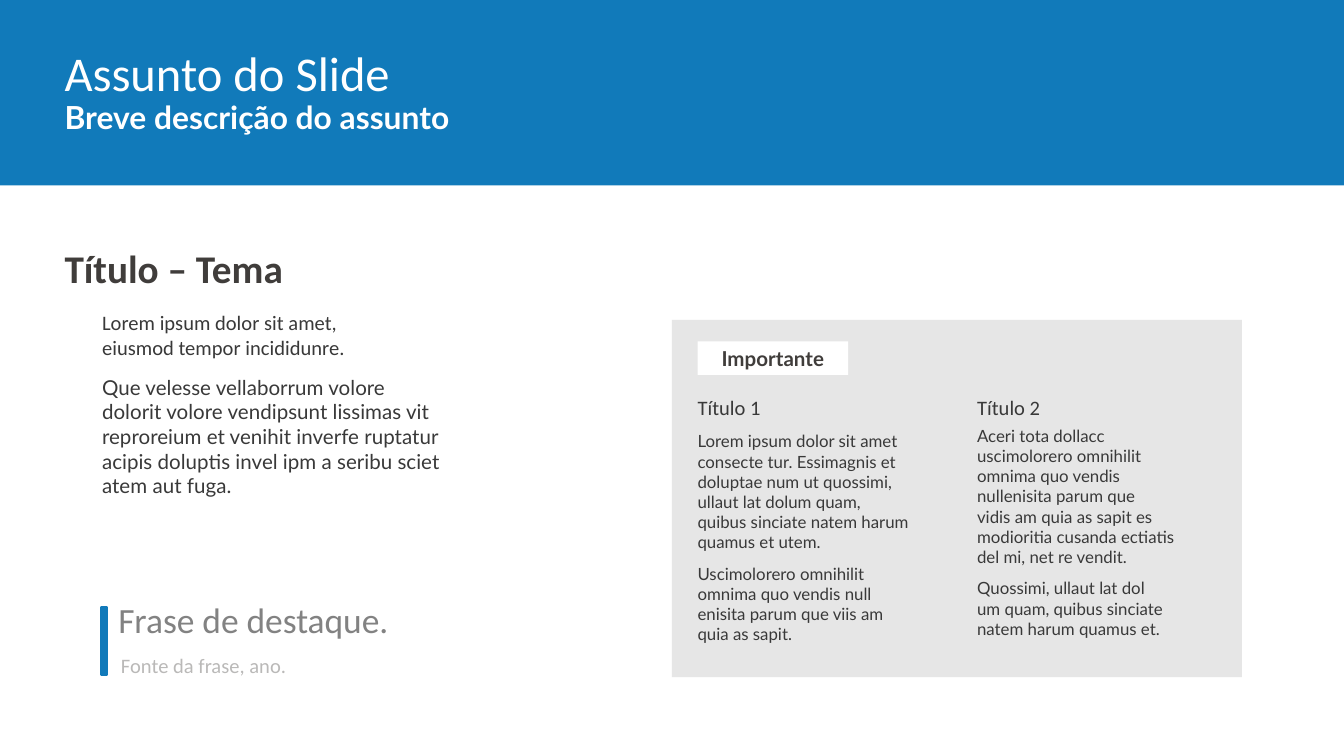
from pptx import Presentation
from pptx.dml.color import RGBColor
from pptx.enum.shapes import MSO_SHAPE
from pptx.enum.text import MSO_ANCHOR, MSO_AUTO_SIZE, PP_ALIGN
from pptx.util import Inches, Pt

COLORS = {
    "blue": "117ABA", "green": "328369", "white": "FFFFFF", "panel": "E6E6E6",
    "heading": "403D3B", "body": "393939", "quote": "828282", "source": "BAB9B8",
}


def color(name):
    """Return the named palette colour."""
    return RGBColor.from_string(COLORS[name])


def write_paragraph(para, text, font, size, color_name, bold=False, after=0, align=PP_ALIGN.LEFT):
    """Write one formatted paragraph."""
    para.text = text
    para.alignment = align
    para.space_before = Pt(0)
    para.space_after = Pt(after)
    for span in para.runs:
        span.font.name = font
        span.font.size = Pt(size)
        span.font.bold = bold
        span.font.color.rgb = color(color_name)


def prepare_frame(frame, anchor=MSO_ANCHOR.TOP):
    """Remove the margins of a text frame and let it wrap."""
    frame.margin_left = frame.margin_top = frame.margin_right = frame.margin_bottom = 0
    frame.word_wrap = True
    frame.auto_size = MSO_AUTO_SIZE.NONE
    frame.vertical_anchor = anchor


def add_text(page, bounds, *paragraphs):
    """Add a text box holding paragraphs given as keyword dicts."""
    frame = page.shapes.add_textbox(*map(Inches, bounds)).text_frame
    prepare_frame(frame)
    for index, settings in enumerate(paragraphs):
        para = frame.add_paragraph() if index else frame.paragraphs[0]
        write_paragraph(para, **settings)


def add_block(page, bounds, fill, line=None, width=0):
    """Add a filled rectangle with an optional outline."""
    block = page.shapes.add_shape(MSO_SHAPE.RECTANGLE, *map(Inches, bounds))
    block.shadow.inherit = False
    block.fill.solid()
    block.fill.fore_color.rgb = color(fill)
    if line:
        block.line.color.rgb = color(line)
        block.line.width = Pt(width)
    else:
        block.line.fill.background()
    return block


def style(text, font, size, color_name, bold=False, after=0):
    """Gather the settings of one paragraph."""
    return dict(text=text, font=font, size=size, color_name=color_name, bold=bold, after=after)


def add_header(page):
    """Add the blue band with the title and its description."""
    band = add_block(page, (0, 0, 10, 1.38), "blue")
    title = page.shapes.title
    band.element.addnext(title.element)
    title.left, title.top, title.width, title.height = map(Inches, (0.48, 0.32, 3.35, 0.42))
    prepare_frame(title.text_frame)
    write_paragraph(title.text_frame.paragraphs[0], "Assunto do Slide", "Calibri", 26, "white")
    add_text(page, (0.48, 0.73, 3.75, 0.46),
             style("Breve descrição do assunto", "Lato", 17, "white", bold=True))


def add_theme(page):
    """Add the theme heading and its body text."""
    add_text(page, (0.48, 1.82, 3.35, 0.34),
             style("Título – Tema", "Calibri", 21, "heading", bold=True))
    add_text(page, (0.76, 2.31, 2.87, 2),
             style("Lorem ipsum dolor sit amet, \neiusmod tempor incididunre.",
                   "Calibri", 11, "body", after=8),
             style("Que velesse vellaborrum volore\ndolorit volore vendipsunt lissimas vit "
                   "reproreium et venihit inverfe ruptatur acipis doluptis invel ipm a seribu "
                   "sciet atem aut fuga.", "Lato", 11, "body", after=8))


def add_quote(page):
    """Add the highlighted sentence beside its bar."""
    add_block(page, (0.76, 4.52, 0.03, 0.5), "green", "blue", 2)
    add_text(page, (0.88, 4.45, 3.35, 0.29), style("Frase de destaque.", "Calibri", 19, "quote"))
    add_text(page, (0.9, 4.86, 2.49, 0.18), style("Fonte da frase, ano.", "Calibri", 11, "source"))


def add_column(page, left, heading, gap, *texts):
    """Add one column of the panel, with a gap below its heading."""
    add_text(page, (left, 2.94, 1.58, 2),
             style(heading, "Calibri", 11, "body", after=gap),
             *(style(text, "Lato", 9, "body", after=6) for text in texts))


def add_panel(page):
    """Add the grey panel with its label and two columns."""
    add_block(page, (5, 2.38, 4.24, 2.66), "panel")
    label = add_block(page, (5.19, 2.54, 1.12, 0.25), "white")
    prepare_frame(label.text_frame, MSO_ANCHOR.MIDDLE)
    write_paragraph(label.text_frame.paragraphs[0], "Importante", "Lato", 11, "heading",
                    bold=True, align=PP_ALIGN.CENTER)
    add_column(page, 5.19, "Título 1", 6,
               "Lorem ipsum dolor sit amet consecte tur. Essimagnis et doluptae num ut quossimi, "
               "ullaut lat dolum quam, quibus sinciate natem harum quamus et utem.",
               "Uscimolorero omnihilit omnima quo vendis null enisita parum que viis am quia as "
               "sapit.")
    add_column(page, 7.27, "Título 2", 3,
               "Aceri tota dollacc uscimolorero omnihilit omnima quo vendis nullenisita parum que\n"
               "vidis am quia as sapit es modioritia cusanda ectiatis del mi, net re vendit.",
               "Quossimi, ullaut lat dol\num quam, quibus sinciate natem harum quamus et.")


def main():
    """Build the slide and save the deck."""
    deck = Presentation()
    deck.slide_width = Inches(10)
    deck.slide_height = deck.slide_width * 9 // 16
    page = deck.slides.add_slide(deck.slide_layouts[5])
    add_header(page)
    add_theme(page)
    add_quote(page)
    add_panel(page)
    deck.save("out.pptx")


if __name__ == "__main__":
    main()
